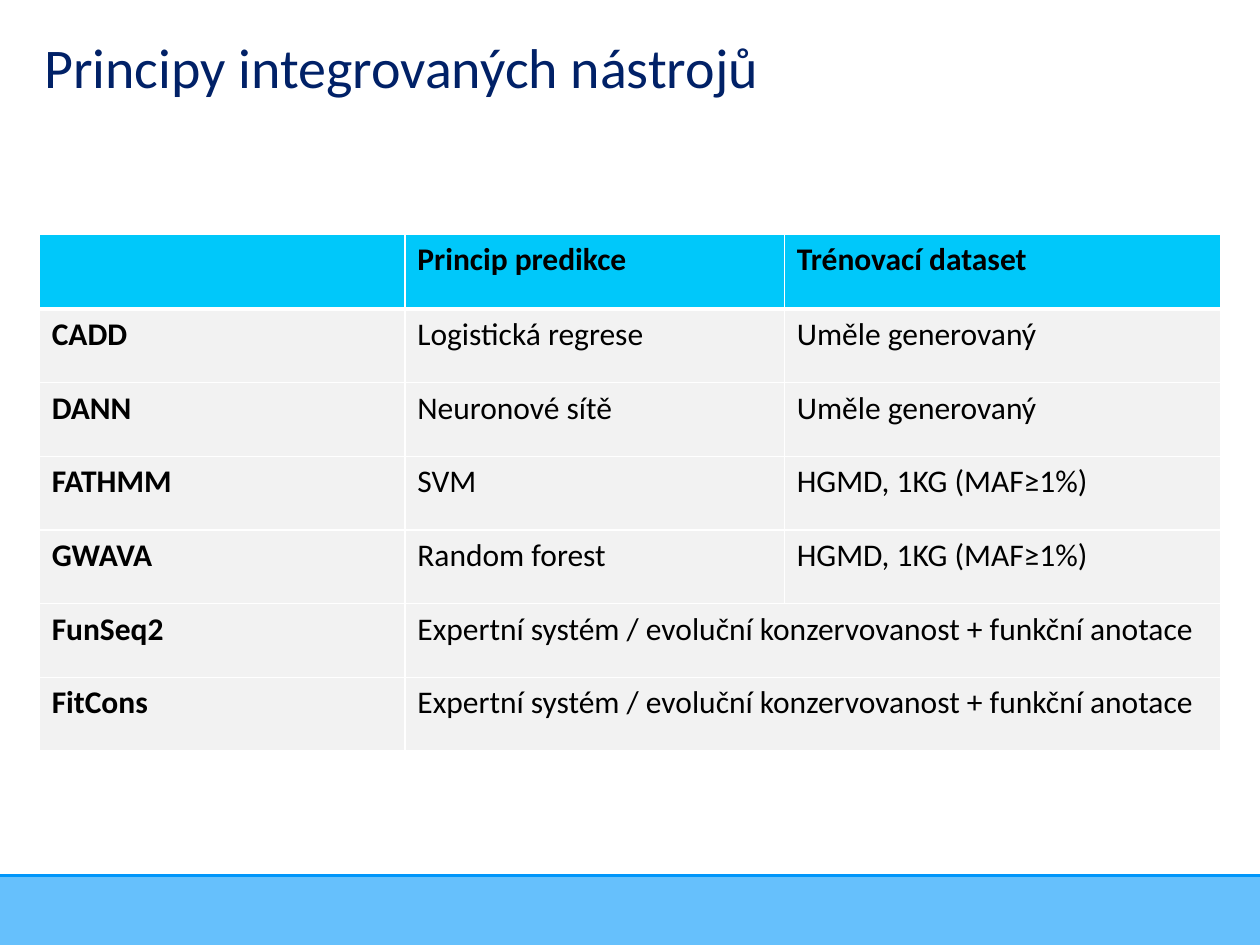
from lxml.etree import SubElement
from pptx import Presentation
from pptx.dml.color import RGBColor
from pptx.enum.shapes import MSO_CONNECTOR, MSO_SHAPE
from pptx.enum.text import MSO_ANCHOR, MSO_AUTO_SIZE, PP_ALIGN
from pptx.oxml.ns import qn
from pptx.util import Cm, Pt

COLORS = {
    "title": "012167",
    "accent": "0096FA",
    "header": "00C8FA",
    "body": "F2F2F2",
    "border": "FFFFFF",
    "text": "000000",
}
SLIDE_WIDTH, SLIDE_HEIGHT = Cm(25.4), Cm(19.05)
FOOTER_TOP = Cm(17.65)
COLUMN_WIDTHS = [7.37, 7.65, 8.79]
HEADER_HEIGHT, ROW_HEIGHT = 1.5, 1.485

EXPERT_SYSTEM = "Expertní systém / evoluční konzervovanost + funkční anotace"
TOOLS = [
    ["", "Princip predikce", "Trénovací dataset"],
    ["CADD", "Logistická regrese", "Uměle generovaný"],
    ["DANN", "Neuronové sítě", "Uměle generovaný"],
    ["FATHMM", "SVM", "HGMD, 1KG (MAF≥1%)"],
    ["GWAVA", "Random forest", "HGMD, 1KG (MAF≥1%)"],
    ["FunSeq2", EXPERT_SYSTEM],
    ["FitCons", EXPERT_SYSTEM],
]


def rgb(key):
    return RGBColor.from_string(COLORS[key])


def apply_format(target, values):
    for attribute, value in values.items():
        setattr(target, attribute, value)


def format_font(font, size, color, bold=False):
    apply_format(font, {"name": "Calibri", "size": Pt(size), "bold": bold})
    font.color.rgb = rgb(color)


def add_footer(slide):
    band = slide.shapes.add_shape(
        MSO_SHAPE.RECTANGLE, 0, FOOTER_TOP, SLIDE_WIDTH, SLIDE_HEIGHT - FOOTER_TOP
    )
    band.shadow.inherit = False
    band.fill.solid()
    band.fill.fore_color.rgb = rgb("accent")
    band_color = band.fill._xPr.find(qn("a:solidFill"))[0]
    SubElement(band_color, qn("a:alpha"), val="60000")
    band.line.fill.background()

    edge = slide.shapes.add_connector(
        MSO_CONNECTOR.STRAIGHT, 0, FOOTER_TOP, SLIDE_WIDTH, FOOTER_TOP
    )
    edge.line.color.rgb = rgb("accent")
    edge.line.width = Pt(1.5)
    SubElement(edge._element.spPr, qn("a:effectLst"))


def set_title(slide, text):
    title = slide.shapes.title
    apply_format(title, {
        "left": Cm(0.89), "top": Cm(0.51), "width": Cm(21.08), "height": Cm(1.5),
    })
    frame = title.text_frame
    apply_format(frame, {
        "text": text,
        "word_wrap": True,
        "auto_size": MSO_AUTO_SIZE.NONE,
        "vertical_anchor": MSO_ANCHOR.BOTTOM,
        "margin_left": 0, "margin_top": 0, "margin_right": 0, "margin_bottom": 0,
    })
    paragraph = frame.paragraphs[0]
    paragraph.alignment = PP_ALIGN.LEFT
    format_font(paragraph.runs[0].font, 32, "title")


def set_borders(cell, top, bottom):
    properties = cell._tc.get_or_add_tcPr()
    for side, width in {"L": 1, "R": 1, "T": top, "B": bottom}.items():
        border = SubElement(properties, qn(f"a:ln{side}"), w=str(Pt(width)))
        fill = SubElement(border, qn("a:solidFill"))
        SubElement(fill, qn("a:srgbClr"), val=COLORS["border"])


def format_cell(cell, row, column):
    set_borders(cell, top=3 if row == 1 else 1, bottom=3 if row == 0 else 1)
    cell.fill.solid()
    cell.fill.fore_color.rgb = rgb("header" if row == 0 else "body")
    paragraph = cell.text_frame.paragraphs[0]
    for run in paragraph.runs:
        format_font(run.font, 18, "text", bold=row == 0 or column == 0)


def add_tool_table(slide):
    heights = [HEADER_HEIGHT] + [ROW_HEIGHT] * (len(TOOLS) - 1)
    table = slide.shapes.add_table(
        len(TOOLS), len(COLUMN_WIDTHS), Cm(0.79), Cm(4.73),
        Cm(sum(COLUMN_WIDTHS)), Cm(sum(heights)),
    ).table
    table.horz_banding = False
    for column, width in zip(table.columns, COLUMN_WIDTHS):
        column.width = Cm(width)
    for row, (values, height) in enumerate(zip(TOOLS, heights)):
        table.rows[row].height = Cm(height)
        if len(values) < len(COLUMN_WIDTHS):
            table.cell(row, 1).merge(table.cell(row, 2))
        for column, value in enumerate(values):
            if value:
                table.cell(row, column).text = value
        for column in range(len(COLUMN_WIDTHS)):
            format_cell(table.cell(row, column), row, column)


def main():
    presentation = Presentation()
    apply_format(presentation, {
        "slide_width": SLIDE_WIDTH, "slide_height": SLIDE_HEIGHT,
    })
    slide = presentation.slides.add_slide(presentation.slide_layouts[5])
    add_footer(slide)
    set_title(slide, "Principy integrovaných nástrojů")
    add_tool_table(slide)
    presentation.save("out.pptx")


if __name__ == "__main__":
    main()
